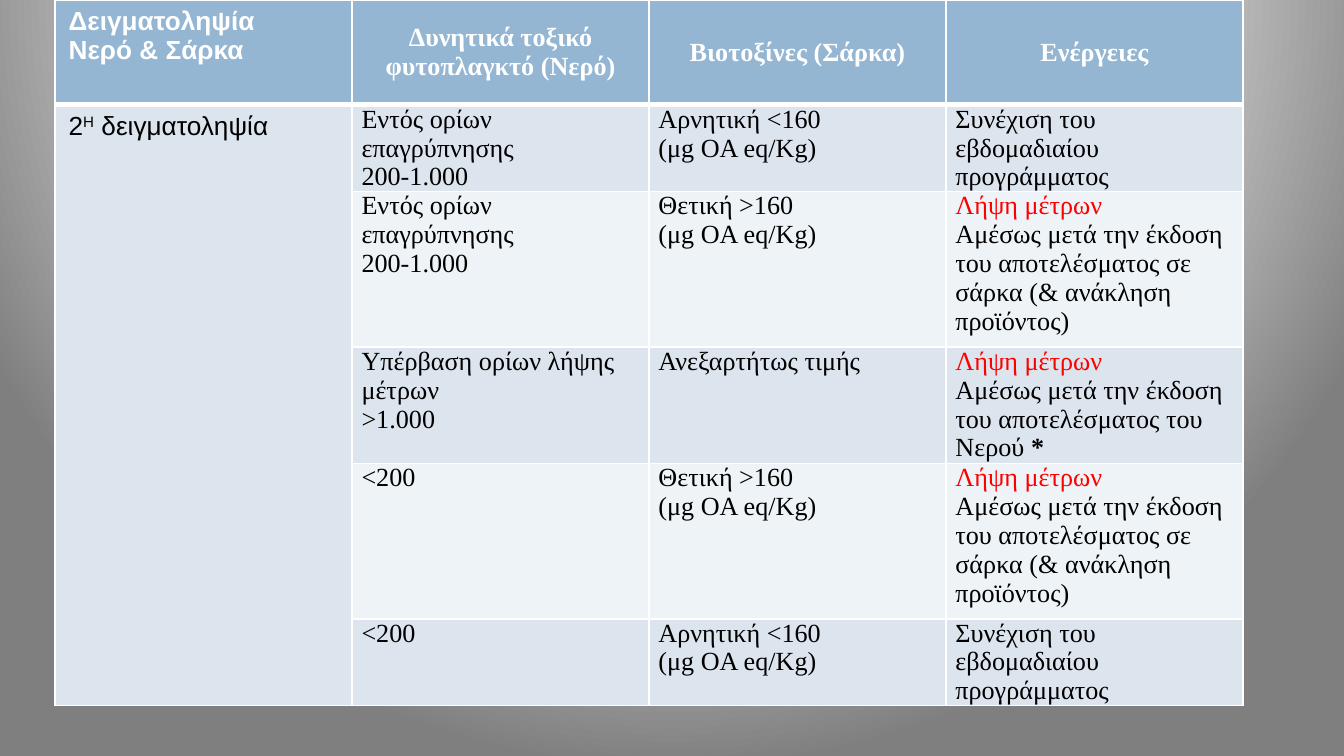
from lxml import etree
from pptx import Presentation
from pptx.dml.color import RGBColor
from pptx.enum.text import MSO_ANCHOR as Anchor, PP_ALIGN as Align
from pptx.oxml import parse_xml
from pptx.oxml.ns import nsdecls, qn
from pptx.util import Pt

COLORS = {
    "header": "94B6D2", "band": "DCE5EE", "light": "EEF3F7", "white": "FFFFFF",
    "black": "000000", "alert": "FF0000", "center": "FEFEFE", "edge": "7F7F7F",
}
SERIF, SANS = "Times New Roman", "Arial"


def write(paragraph, text, font=SERIF, color="black", bold=False, align=Align.LEFT, raised=False):
    paragraph.alignment = align
    run = paragraph.add_run()
    run.text = text
    run.font.name = font
    run.font.size = Pt(14)
    run.font.bold = bold
    run.font.color.rgb = RGBColor.from_string(COLORS[color])
    if raised:
        run.font._element.set("baseline", "30000")


def paint(cell, fill, bottom=1):
    properties = cell._tc.get_or_add_tcPr()
    for side, width in (("L", 1), ("R", 1), ("T", 1), ("B", bottom)):
        border = etree.SubElement(properties, qn(f"a:ln{side}"), w=str(Pt(width)))
        solid = etree.SubElement(border, qn("a:solidFill"))
        etree.SubElement(solid, qn("a:srgbClr"), val=COLORS["white"])
    cell.fill.solid()
    cell.fill.fore_color.rgb = RGBColor.from_string(COLORS[fill])


presentation = Presentation()
presentation.slide_width = Pt(720)
presentation.slide_height = Pt(405)
slide = presentation.slides.add_slide(presentation.slide_layouts[6])

slide.background.fill.gradient()
gradient = slide.element.xpath(".//a:gradFill")[0]
stops = "".join(
    f'<a:gs pos="{position}000"><a:srgbClr val="{COLORS[name]}"/></a:gs>'
    for position, name in ((0, "white"), (40, "center"), (100, "edge"))
)
gradient.getparent().replace(gradient, parse_xml(
    f'<a:gradFill {nsdecls("a")} rotWithShape="1"><a:gsLst>{stops}</a:gsLst>'
    '<a:path path="circle"><a:fillToRect l="50000" t="-80000" r="50000" b="180000"/></a:path>'
    '</a:gradFill>'
))

headers = [
    ["Δειγματοληψία", "Νερό & Σάρκα"],
    ["Δυνητικά τοξικό φυτοπλαγκτό (Νερό)"],
    ["Βιοτοξίνες (Σάρκα)"],
    ["Ενέργειες"],
]
within_limits = ["Εντός ορίων επαγρύπνησης", "200-1.000"]
negative = ["Αρνητική <160", "(μg OA eq/Kg)"]
positive = ["Θετική >160", "(μg OA eq/Kg)"]
measures = "Λήψη μέτρων "
carry_on = ["Συνέχιση του εβδομαδιαίου προγράμματος"]
after_flesh = [measures, "Αμέσως μετά την έκδοση του αποτελέσματος σε σάρκα (& ανάκληση προϊόντος)"]
after_water = [measures, "Αμέσως μετά την έκδοση του αποτελέσματος του Νερού "]
cases = [
    [within_limits, negative, carry_on],
    [within_limits, positive, after_flesh],
    [["Υπέρβαση ορίων λήψης μέτρων", ">1.000"], ["Ανεξαρτήτως τιμής"], after_water],
    [["<200"], positive, after_flesh],
    [["<200"], negative, carry_on],
]
row_heights = [56.2, 46.4, 83.3, 62.3, 83.3, 46.4]

frame = slide.shapes.add_table(6, 4, Pt(29.6), Pt(0), Pt(636.4), Pt(sum(row_heights)))
sampling = frame.table
for column in sampling.columns:
    column.width = Pt(159.1)
for row, height in zip(sampling.rows, row_heights):
    row.height = Pt(height)

for r in range(6):
    for c in range(4):
        cell = sampling.cell(r, c)
        if c:
            cell.margin_left = cell.margin_right = Pt(5)
            cell.margin_top = cell.margin_bottom = Pt(0)
        if r == 0:
            paint(cell, "header", bottom=3)
            lines = headers[c]
            style = {"color": "white", "bold": True}
            if c:
                cell.vertical_anchor = Anchor.MIDDLE
                style["align"] = Align.CENTER
            else:
                style["font"] = SANS
        else:
            paint(cell, "band" if r % 2 or c == 0 else "light")
            lines = cases[r - 1][c - 1] if c else []
            style = {}
        for i, line in enumerate(lines):
            paragraph = cell.text_frame.add_paragraph() if i else cell.text_frame.paragraphs[0]
            if line == measures:
                write(paragraph, line, color="alert")
            else:
                write(paragraph, line, **style)
        if lines is after_water:
            write(paragraph, "*", bold=True)

second_sampling = sampling.cell(1, 0)
second_sampling.merge(sampling.cell(5, 0))
label = second_sampling.text_frame.paragraphs[0]
write(label, "2", font=SANS)
write(label, "Η", font=SANS, raised=True)
write(label, " δειγματοληψία", font=SANS)

presentation.save("out.pptx")
